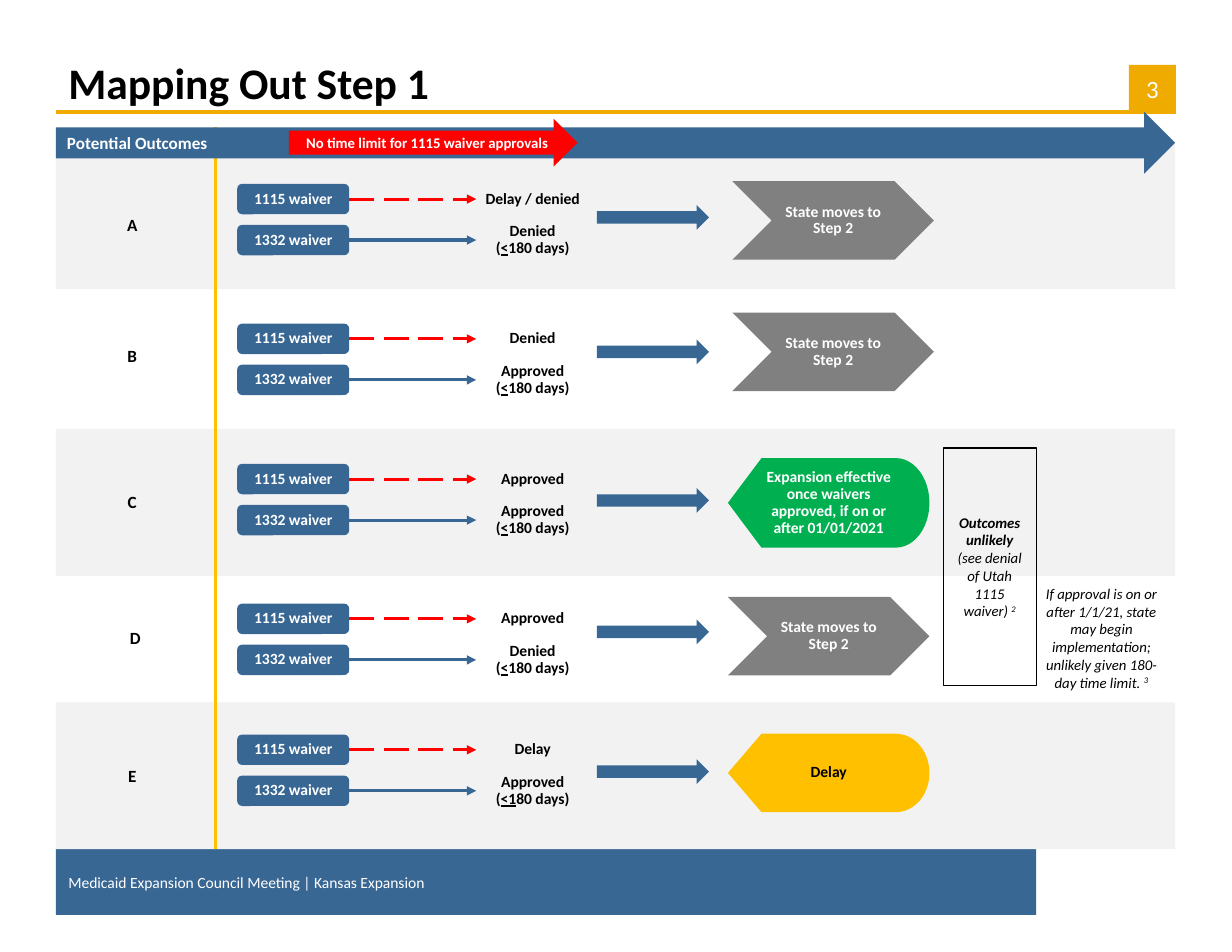
from dataclasses import dataclass

from lxml.etree import SubElement
from pptx import Presentation
from pptx.dml.color import RGBColor
from pptx.enum.dml import MSO_LINE
from pptx.enum.shapes import MSO_CONNECTOR, MSO_SHAPE
from pptx.enum.text import MSO_ANCHOR, PP_ALIGN
from pptx.oxml.ns import qn
from pptx.util import Cm, Pt


@dataclass(frozen=True)
class Theme:
    font: str = "Calibri"
    blue: str = "386794"
    red: str = "FF0000"
    gold: str = "F0AB00"
    amber: str = "FFC000"
    green: str = "00B050"
    gray: str = "808080"
    band: str = "F2F2F2"
    black: str = "000000"
    white: str = "FFFFFF"
    title_size: float = 28
    number_size: float = 16
    heading_size: float = 11
    label_size: float = 10
    note_size: float = 9.5


@dataclass(frozen=True)
class Outcome:
    letter: str
    letter_left: float
    letter_top: float
    waiver_top: float
    answer_1115: str
    answer_1332: str
    underlined: str
    arrow_top: float
    result: str
    shape: MSO_SHAPE
    color: str
    text_color: str
    result_at: tuple


class SlideBuilder:
    def __init__(self, page, theme):
        self.page = page
        self.theme = theme

    def label(self, shape, spans, size, color, bold=False, italic=False,
              align=PP_ALIGN.CENTER, anchor=MSO_ANCHOR.MIDDLE,
              inset=(0.03, 0.03), spacing=None):
        """Fill a shape with one paragraph; spans are (text, style) pairs or a string."""
        frame = shape.text_frame
        frame.word_wrap = True
        frame.vertical_anchor = anchor
        frame.margin_left = frame.margin_right = Cm(inset[0])
        frame.margin_top = frame.margin_bottom = Cm(inset[1])
        para = frame.paragraphs[0]
        para.alignment = align
        para.line_spacing = spacing
        font = para.font
        font.name = self.theme.font
        font.size = Pt(size)
        font.bold = bold
        font.italic = italic
        font.color.rgb = RGBColor.from_string(color)
        for text, style in [(spans, "")] if isinstance(spans, str) else spans:
            span = para.add_run()
            span.text = text
            if style == "underline":
                span.font.underline = True
            elif style == "bold":
                span.font.bold = True
            elif style == "superscript":
                span.font._element.set("baseline", "30000")

    def title(self, text, left, top, width, height):
        box = self.page.shapes.title
        box.left, box.top, box.width, box.height = map(Cm, (left, top, width, height))
        self.label(box, text, self.theme.title_size, self.theme.black, bold=True,
                   align=PP_ALIGN.LEFT, anchor=MSO_ANCHOR.BOTTOM, inset=(0.28, 0.15))

    def shape(self, kind, left, top, width, height, fill=None, outline=None):
        shape = self.page.shapes.add_shape(kind, *map(Cm, (left, top, width, height)))
        shape.shadow.inherit = False
        if fill:
            shape.fill.solid()
            shape.fill.fore_color.rgb = RGBColor.from_string(fill)
        else:
            shape.fill.background()
        if outline:
            shape.line.color.rgb = RGBColor.from_string(outline)
            shape.line.width = Pt(0.75)
        else:
            shape.line.fill.background()
        return shape

    def text(self, spans, left, top, width, height, size, **style):
        box = self.page.shapes.add_textbox(*map(Cm, (left, top, width, height)))
        self.label(box, spans, size, self.theme.black, **style)

    def line(self, x1, y1, x2, y2, color, dashed=False, arrow=False):
        line = self.page.shapes.add_connector(
            MSO_CONNECTOR.STRAIGHT, *map(Cm, (x1, y1, x2, y2)))
        line.line.color.rgb = RGBColor.from_string(color)
        line.line.width = Pt(2)
        if dashed:
            line.line.dash_style = MSO_LINE.LONG_DASH
        if arrow:
            SubElement(line.line._get_or_add_ln(), qn("a:tailEnd"), type="triangle")
        SubElement(line._element.spPr, qn("a:effectLst"))

    def waiver(self, name, answer, top, answer_width, color, dashed=False):
        """Draw a waiver box, its arrow and the answer it leads to."""
        theme, height = self.theme, 0.69
        middle = top + height / 2
        self.line(7.92, middle, 10.8, middle, color, dashed, arrow=True)
        box = self.shape(MSO_SHAPE.ROUNDED_RECTANGLE, 5.38, top, 2.54, height, theme.blue)
        self.label(box, name, theme.label_size, theme.white, bold=True, spacing=0.9)
        self.text(answer, 12.08 - answer_width / 2, middle - 0.41, answer_width, 0.82,
                  theme.label_size, bold=True, spacing=0.9)

    def outcome(self, row):
        theme = self.theme
        self.text(row.letter, row.letter_left, row.letter_top, 2.08, 0.74,
                  theme.heading_size, bold=True)
        self.waiver("1115 waiver", row.answer_1115, row.waiver_top, 2.54, theme.red, True)
        days = "180 days)"[len(row.underlined) - 1:]
        answer = [(f"{row.answer_1332} (", ""), (row.underlined, "underline"), (days, "")]
        self.waiver("1332 waiver", answer, row.waiver_top + 0.93, 1.8, theme.blue)
        self.shape(MSO_SHAPE.RIGHT_ARROW, 13.54, row.arrow_top, 2.54, 0.56, theme.blue)
        left, top, height = row.result_at
        result = self.shape(row.shape, left, top, 4.57, height, row.color)
        self.label(result, row.result, theme.label_size, row.text_color,
                   bold=True, spacing=0.9)


def main():
    theme = Theme()
    deck = Presentation()
    deck.slide_width, deck.slide_height = Cm(27.94), Cm(21.59)
    page = deck.slides.add_slide(deck.slide_layouts[5])
    builder = SlideBuilder(page, theme)

    footer = builder.shape(MSO_SHAPE.RECTANGLE, 1.27, 19.25, 22.23, 1.5, theme.blue)
    builder.label(footer, "Medicaid Expansion Council Meeting | Kansas Expansion",
                  theme.label_size, theme.white, align=PP_ALIGN.LEFT, inset=(0.28, 0))
    builder.line(1.27, 2.54, 26.67, 2.54, theme.gold)
    number = builder.shape(MSO_SHAPE.RECTANGLE, 25.6, 1.47, 1.07, 1.07, theme.gold)
    builder.label(number, "3", theme.number_size, theme.white)
    builder.title("Mapping Out Step 1", 1.27, 1.14, 24.33, 1.47)

    for top in (3.23, 9.73, 15.93):
        builder.shape(MSO_SHAPE.RECTANGLE, 1.27, top, 25.38, 3.33, theme.band)
    builder.line(4.88, 2.87, 4.88, 19.25, theme.amber)

    chevron, display = MSO_SHAPE.CHEVRON, MSO_SHAPE.FLOWCHART_DISPLAY
    step_2 = ("State moves to Step 2", chevron, theme.gray, theme.white)
    expansion = ("Expansion effective once waivers approved, if on or after 01/01/2021",
                 display, theme.green, theme.white)
    delay = ("Delay", display, theme.amber, theme.black)
    outcomes = [
        Outcome("A", 1.96, 4.72, 4.17, "Delay / denied", "Denied", "<", 4.65,
                *step_2, (16.61, 4.11, 1.78)),
        Outcome("B", 1.96, 7.7, 7.34, "Denied", "Approved", "<", 7.7,
                *step_2, (16.61, 7.09, 1.78)),
        Outcome("C", 1.96, 11, 10.52, "Approved", "Approved", "<", 11.07,
                *expansion, (16.51, 10.39, 2.03)),
        Outcome("D", 2.03, 14.1, 13.69, "Approved", "Denied", "<", 14.05,
                *step_2, (16.51, 13.54, 1.78)),
        Outcome("E", 1.96, 17.22, 16.66, "Delay", "Approved", "<1", 17.22,
                *delay, (16.51, 16.64, 1.78)),
    ]
    for row in outcomes:
        builder.outcome(row)

    unlikely = builder.shape(MSO_SHAPE.RECTANGLE, 21.39, 10.16, 2.11, 5.38,
                             outline=theme.black)
    builder.label(unlikely,
                  [("Outcomes unlikely ", "bold"),
                   ("(see denial of Utah 1115 waiver) ", ""), ("2", "superscript")],
                  theme.note_size, theme.black, italic=True, inset=(0.25, 0.13))
    builder.text([("If approval is on or after 1/1/21, state may begin implementation; "
                   "unlikely given 180-day time limit. ", ""), ("3", "superscript")],
                 23.29, 13.13, 3.38, 2.69, theme.note_size, italic=True,
                 anchor=MSO_ANCHOR.TOP, inset=(0.25, 0.13))

    timeline = builder.shape(MSO_SHAPE.RIGHT_ARROW, 1.27, 2.54, 25.38, 1.4, theme.blue)
    builder.label(timeline, "Potential Outcomes", theme.heading_size, theme.white,
                  bold=True, align=PP_ALIGN.LEFT, inset=(0.25, 0))
    limit = builder.shape(MSO_SHAPE.RIGHT_ARROW, 6.55, 2.69, 6.55, 1.09, theme.red)
    builder.label(limit, "No time limit for 1115 waiver approvals", theme.note_size,
                  theme.white, bold=True, inset=(0.03, 0))
    deck.save("out.pptx")


if __name__ == "__main__":
    main()
